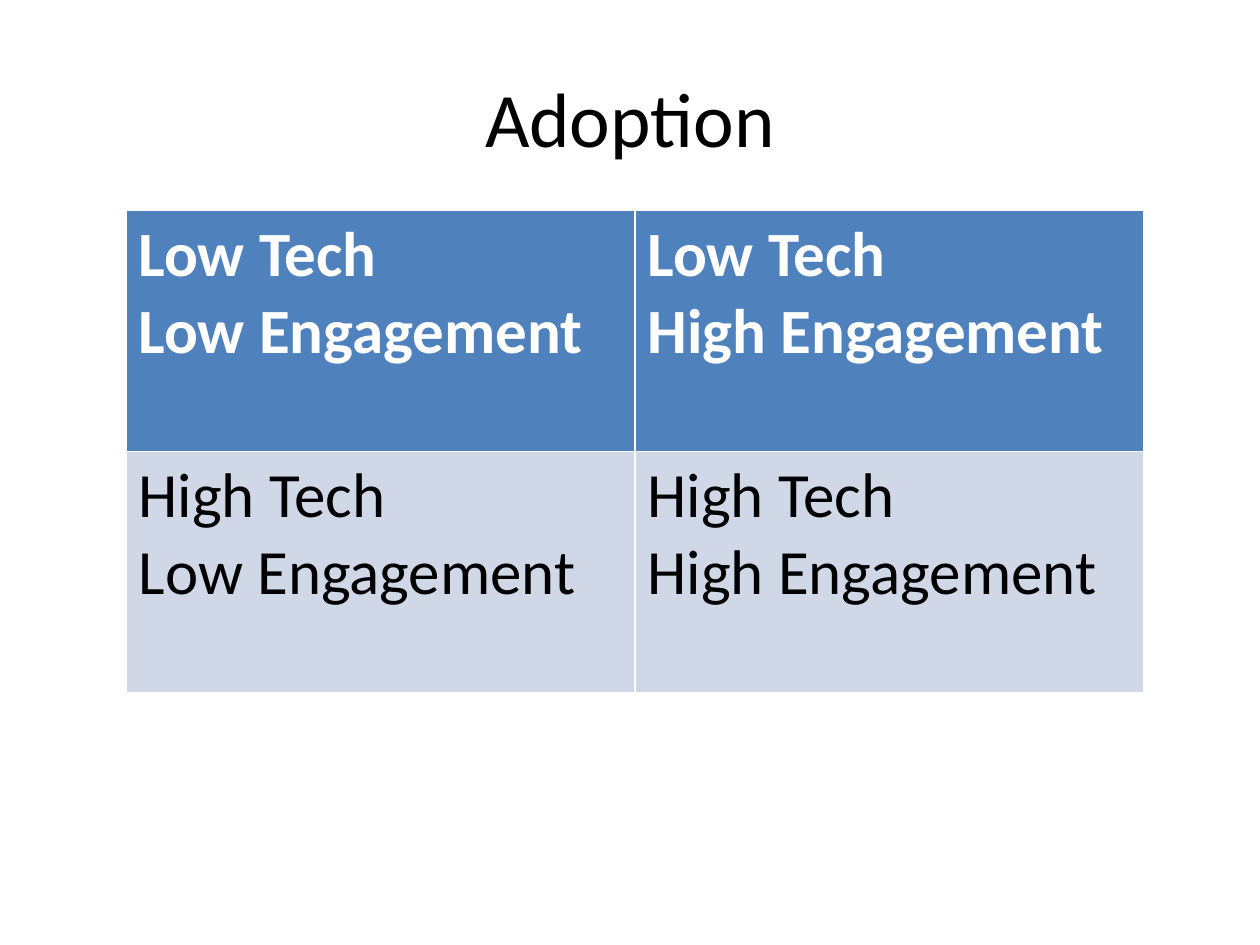
from pptx import Presentation
from pptx.dml.color import RGBColor
from pptx.enum.text import MSO_ANCHOR, PP_ALIGN
from pptx.util import Cm, Pt

CENTER = PP_ALIGN.CENTER
MIDDLE = MSO_ANCHOR.MIDDLE
TITLE_ONLY = 5

COLORS = {
    "title": "000000",
    "low_tech_fill": "4F81BD",
    "low_tech_text": "FFFFFF",
    "high_tech_fill": "D0D8E8",
    "high_tech_text": "000000",
}


class SlideBuilder:
    """Holds the style and the current slide."""

    font = "Calibri"

    def __init__(self, deck):
        self.slide = deck.slides.add_slide(deck.slide_layouts[TITLE_ONLY])

    def style(self, frame, size, color, bold=False):
        for paragraph in frame.paragraphs:
            for run in paragraph.runs:
                run.font.name = self.font
                run.font.size = Pt(size)
                run.font.bold = bold
                run.font.color.rgb = RGBColor.from_string(COLORS[color])

    def title(self, text, left, top, width, height):
        heading = self.slide.shapes.title
        heading.left, heading.top = Cm(left), Cm(top)
        heading.width, heading.height = Cm(width), Cm(height)
        frame = heading.text_frame
        frame.text = text
        frame.vertical_anchor = MIDDLE
        frame.paragraphs[0].alignment = CENTER
        self.style(frame, 44, "title")

    def matrix(self, levels, left, top, column_width, row_height):
        """Cross technology levels (rows) with engagement levels (columns)."""
        count = len(levels)
        grid = self.slide.shapes.add_table(
            count, count, Cm(left), Cm(top),
            Cm(column_width * count), Cm(row_height * count)).table
        for row, tech in enumerate(levels):
            grid.rows[row].height = Cm(row_height)
            band = f"{tech.lower()}_tech"
            for column, engagement in enumerate(levels):
                cell = grid.cell(row, column)
                cell.text_frame.text = f"{tech} Tech\n{engagement} Engagement"
                cell.fill.solid()
                cell.fill.fore_color.rgb = RGBColor.from_string(COLORS[f"{band}_fill"])
                self.style(cell.text_frame, 36, f"{band}_text", bold=row == 0)


def main():
    deck = Presentation()
    deck.slide_width, deck.slide_height = Cm(25.4), Cm(19.05)
    builder = SlideBuilder(deck)

    # Title
    builder.title("Adoption", 1.27, 0.76, 22.86, 3.18)

    # Technology and engagement matrix; its white rules come from the table style
    builder.matrix(["Low", "High"], 2.54, 4.23, 10.26, 4.87)

    deck.save("out.pptx")


if __name__ == "__main__":
    main()
